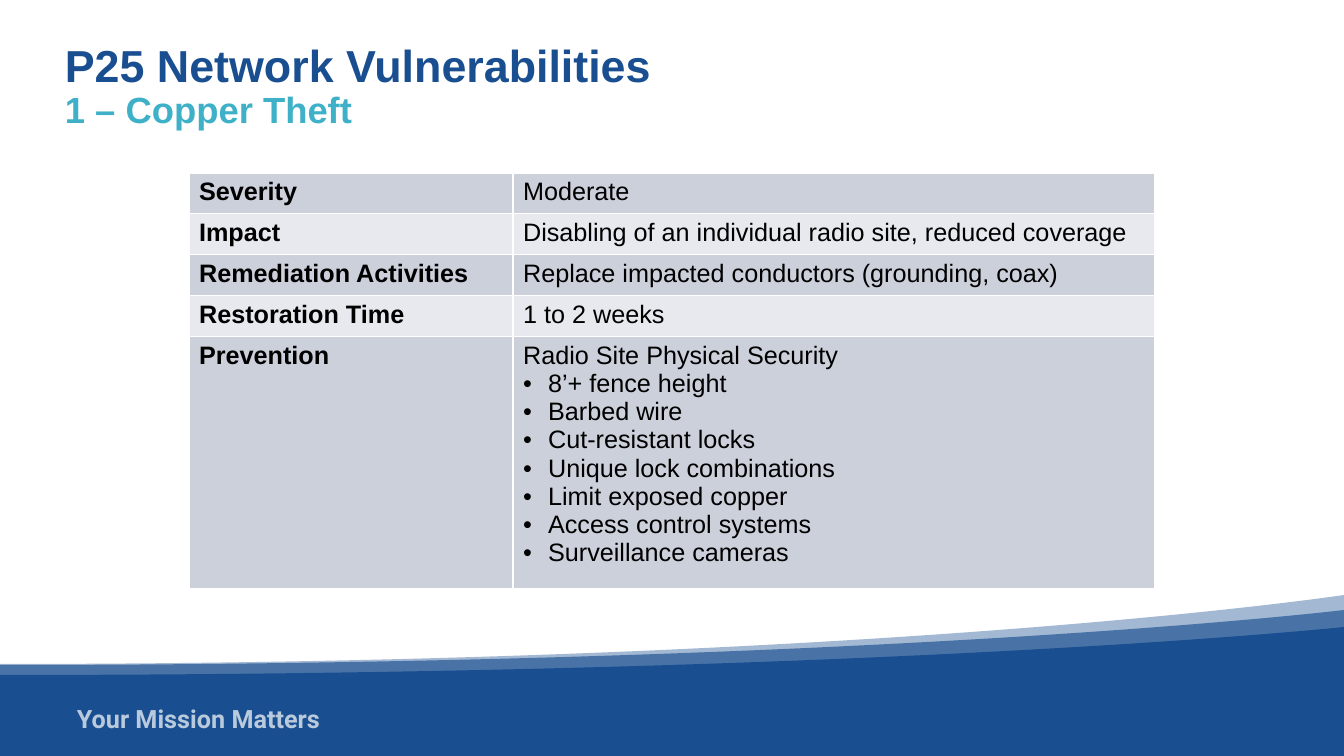
from lxml.etree import SubElement
from pptx import Presentation
from pptx.dml.color import RGBColor
from pptx.oxml.ns import qn
from pptx.util import Pt

EMU_PER_PX = 914400 / 100.8
NAVY, TEAL, WHITE, BLACK = "194F90", "3EB1C8", "FFFFFF", "000000"
BANDS = ["CCD0DB", "E8E9EE"]

WAVES = [
    {"right": 595, "left": 664, "bend": 887, "alpha": 40},
    {"right": 610, "left": 665, "bend": 888, "alpha": 65},
    {"right": 627, "left": 675, "bend": 889, "alpha": 100},
]
ROWS = [
    ("Severity", "Moderate", []),
    ("Impact", "Disabling of an individual radio site, reduced coverage", []),
    ("Remediation Activities", "Replace impacted conductors (grounding, coax)", []),
    ("Restoration Time", "1 to 2 weeks", []),
    ("Prevention", "Radio Site Physical Security", [
        "8’+ fence height", "Barbed wire", "Cut-resistant locks",
        "Unique lock combinations", "Limit exposed copper",
        "Access control systems", "Surveillance cameras"]),
]


def px(length):
    """Turn pixels into EMU."""
    return round(length * EMU_PER_PX)


def paint(color_format, color, alpha=100):
    """Set a hex colour with an opacity in percent."""
    color_format.rgb = RGBColor.from_string(color)
    if alpha < 100:
        for element in color_format._xFill.iter(qn("a:srgbClr")):
            SubElement(element, qn("a:alpha"), val=str(alpha * 1000))


def add_run(paragraph, text, size, color, bold=False, font="Arial", alpha=100):
    """Append one styled run."""
    run = paragraph.add_run()
    run.text = text
    run.font.size = Pt(size)
    run.font.name = font
    run.font.bold = bold
    run.font.fill.solid()
    paint(run.font.fill.fore_color, color, alpha)
    return run


def add_text_box(slide, left, top, width, height):
    """Add a wrapping text box and return its first paragraph."""
    box = slide.shapes.add_textbox(px(left), px(top), px(width), px(height))
    box.text_frame.word_wrap = True
    return box.text_frame.paragraphs[0]


def curve_top_edge(wave):
    """Merge the first three line segments into one Bezier curve."""
    segments = list(wave._element.iter(qn("a:lnTo")))[:3]
    curve = segments[0].makeelement(qn("a:cubicBezTo"))
    segments[0].addprevious(curve)
    for segment in segments:
        curve.append(segment[0])
        segment.getparent().remove(segment)


def add_wave(slide, width, bottom, right, left, bend, alpha):
    """Draw one band whose top edge curves down from right to left."""
    builder = slide.shapes.build_freeform(width, right, scale=EMU_PER_PX)
    builder.add_line_segments(
        [(width, right), (bend, left), (0, left), (0, bottom), (width, bottom)],
        close=True)
    wave = builder.convert_to_shape()
    curve_top_edge(wave)
    wave.shadow.inherit = False
    wave.line.fill.background()
    wave.fill.solid()
    paint(wave.fill.fore_color, NAVY, alpha)


def add_footer(slide, width, bottom):
    """Draw the layered waves and the tagline on them."""
    for wave in WAVES:
        add_wave(slide, width, bottom, **wave)
    paragraph = add_text_box(slide, 67, bottom - 58, 392, 41)
    for text, spacing in [("You", 0), ("r", -150), (" Missio", 0),
                          ("n", -150), (" Matters", 0)]:
        run = add_run(paragraph, text, 18, WHITE, True, "Roboto", 70)
        run.font._element.set("spc", str(spacing))


def add_title(slide, left, top, width, height):
    """Write the heading with its subtitle below."""
    paragraph = add_text_box(slide, left, top, width, height)
    paragraph.line_spacing = 0.9
    add_run(paragraph, "P25 Network Vulnerabilities", 32, NAVY, True)
    paragraph.add_line_break()
    add_run(paragraph, "1 – Copper Theft", 26, TEAL, True)


def add_bullet(paragraph):
    """Give a paragraph a hanging round bullet."""
    properties = paragraph._p.get_or_add_pPr()
    properties.set("marL", str(px(25)))
    properties.set("indent", str(-px(25)))
    SubElement(properties, qn("a:buFont"), typeface="Arial")
    SubElement(properties, qn("a:buChar"), char="•")


def add_summary_table(slide, left, top, column_widths, row_heights, height):
    """Build the two-column table, whose rows grow with their text."""
    frame = slide.shapes.add_table(
        len(ROWS), len(column_widths), px(left), px(top),
        px(sum(column_widths)), px(height))
    table = frame.table
    table.first_row = False
    for column, width in zip(table.columns, column_widths):
        column.width = px(width)
    for index, (label, detail, bullets) in enumerate(ROWS):
        table.rows[index].height = px(row_heights[index])
        label_cell, detail_cell = table.rows[index].cells
        for cell, text, bold in ((label_cell, label, True), (detail_cell, detail, False)):
            cell.fill.solid()
            paint(cell.fill.fore_color, BANDS[index % 2])
            add_run(cell.text_frame.paragraphs[0], text, 18, BLACK, bold)
        for text in bullets:
            paragraph = detail_cell.text_frame.add_paragraph()
            add_bullet(paragraph)
            add_run(paragraph, text, 18, BLACK)
    frame.height = px(height)


def main():
    """Build and save the slide."""
    presentation = Presentation()
    presentation.slide_width = px(1344)
    presentation.slide_height = px(756)
    slide = presentation.slides.add_slide(presentation.slide_layouts[6])
    add_footer(slide, 1344, 756)
    add_title(slide, 55, 39, 1213, 52)
    add_summary_table(slide, 189, 173, [324, 642], [0, 41, 41, 41, 41], 415)
    presentation.save("out.pptx")


if __name__ == "__main__":
    main()
